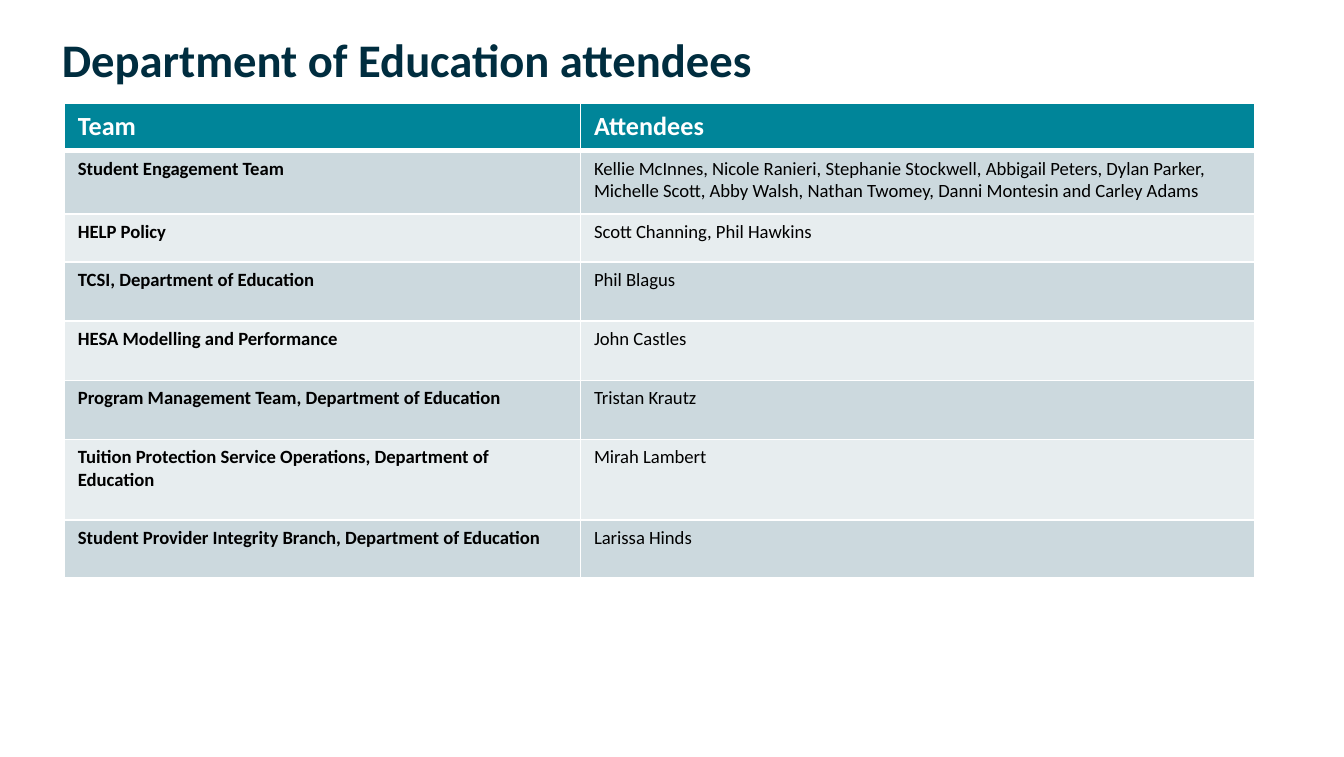
import lxml.etree
import pptx
import pptx.dml.color
import pptx.enum.text
import pptx.oxml.ns
import pptx.util

TITLE = "Department of Education attendees"
HEADER = ("Team", "Attendees")
TEAMS = [
    ("Student Engagement Team",
     "Kellie McInnes, Nicole Ranieri, Stephanie Stockwell, Abbigail Peters, "
     "Dylan Parker, Michelle Scott, Abby Walsh, Nathan Twomey, "
     "Danni Montesin and Carley Adams"),
    ("HELP Policy", "Scott Channing, Phil Hawkins"),
    ("TCSI, Department of Education", "Phil Blagus"),
    ("HESA Modelling and Performance", "John Castles"),
    ("Program Management Team, Department of Education", "Tristan Krautz"),
    ("Tuition Protection Service Operations, Department of Education",
     "Mirah Lambert"),
    ("Student Provider Integrity Branch, Department of Education",
     "Larissa Hinds"),
]
COLUMN_WIDTHS = (3.84, 5.02)
ROW_HEIGHTS = (0.35, 0.47, 0.36, 0.44, 0.44, 0.44, 0.6, 0.43)
COLORS = {"title": "002D3F", "header": "008599", "odd": "CCD9DE",
          "even": "E7EDEF", "text": "000000", "white": "FFFFFF"}
FONT = "Calibri"
INCH = pptx.util.Inches


def rgb(name):
    return pptx.dml.color.RGBColor.from_string(COLORS[name])


def add_run(paragraph, text, size, color, bold):
    run = paragraph.add_run()
    run.text = text
    run.font.name = FONT
    run.font.size = pptx.util.Pt(size)
    run.font.bold = bold
    run.font.color.rgb = rgb(color)


def set_borders(cell, widths):
    """Draw white cell borders; widths maps an edge tag to points."""
    properties = cell._tc.get_or_add_tcPr()
    qn = pptx.oxml.ns.qn
    for edge, width in widths.items():
        line = lxml.etree.SubElement(properties, qn(f"a:{edge}"),
                                     w=str(pptx.util.Pt(width)))
        fill = lxml.etree.SubElement(line, qn("a:solidFill"))
        lxml.etree.SubElement(fill, qn("a:srgbClr"), val=COLORS["white"])


def add_title(slide):
    title = slide.shapes.title
    title.left, title.top = INCH(0.46), INCH(-0.08)
    title.width, title.height = INCH(6.96), INCH(1.09)
    frame = title.text_frame
    frame.margin_left = frame.margin_right = 0
    frame.margin_top = frame.margin_bottom = 0
    frame.word_wrap = True
    frame.vertical_anchor = pptx.enum.text.MSO_ANCHOR.MIDDLE
    paragraph = frame.paragraphs[0]
    paragraph.alignment = pptx.enum.text.PP_ALIGN.LEFT
    paragraph.line_spacing = 0.9
    add_run(paragraph, TITLE, 25, "title", True)


def add_attendee_table(slide):
    rows = [HEADER] + TEAMS
    table = slide.shapes.add_table(
        len(rows), len(HEADER), INCH(0.48), INCH(0.77),
        INCH(sum(COLUMN_WIDTHS)), INCH(sum(ROW_HEIGHTS))).table
    for column, width in zip(table.columns, COLUMN_WIDTHS):
        column.width = INCH(width)
    for row, height in zip(table.rows, ROW_HEIGHTS):
        row.height = INCH(height)

    for row_index, texts in enumerate(rows):
        is_header = row_index == 0
        band = "header" if is_header else ("even", "odd")[row_index % 2]
        widths = {"lnL": 1, "lnR": 1,
                  "lnT": 3 if row_index == 1 else 1,
                  "lnB": 3 if is_header else 1}
        for column_index, text in enumerate(texts):
            cell = table.cell(row_index, column_index)
            set_borders(cell, widths)
            cell.fill.solid()
            cell.fill.fore_color.rgb = rgb(band)
            add_run(cell.text_frame.paragraphs[0], text,
                    14 if is_header else 10,
                    "white" if is_header else "text",
                    is_header or column_index == 0)


def main():
    presentation = pptx.Presentation()
    presentation.slide_width = INCH(10)
    presentation.slide_height = INCH(5.63)
    slide = presentation.slides.add_slide(presentation.slide_layouts[5])
    add_title(slide)
    add_attendee_table(slide)
    presentation.save("out.pptx")


if __name__ == "__main__":
    main()
